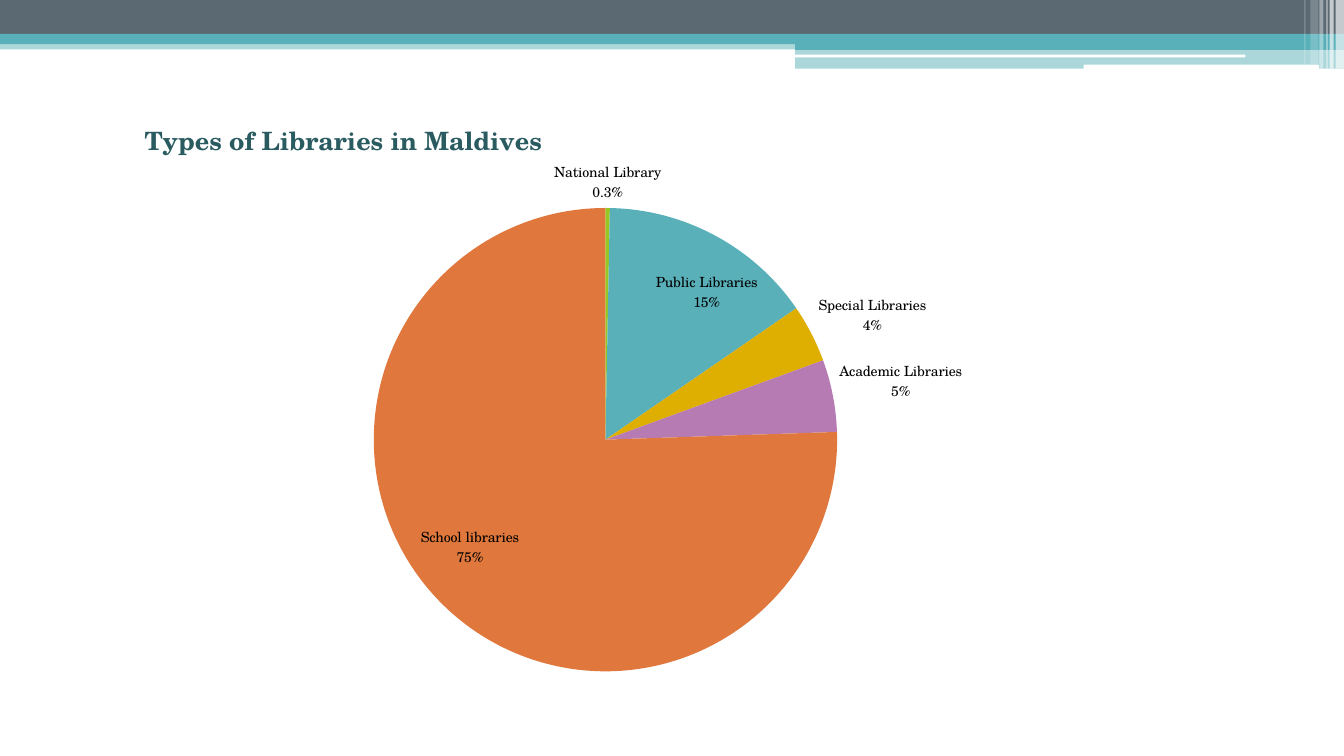
from lxml import etree
from pptx import Presentation
from pptx.chart.data import CategoryChartData
from pptx.dml.color import RGBColor
from pptx.enum.chart import XL_CHART_TYPE, XL_LABEL_POSITION
from pptx.enum.shapes import MSO_SHAPE
from pptx.oxml.ns import qn
from pptx.util import Pt

RECT, ROUND = MSO_SHAPE.RECTANGLE, MSO_SHAPE.ROUNDED_RECTANGLE
PIE = XL_CHART_TYPE.PIE
INSIDE, OUTSIDE = XL_LABEL_POSITION.INSIDE_END, XL_LABEL_POSITION.OUTSIDE_END
WIDE, HIGH = 960, 540
FONT = "TeX Gyre Schola"
COLORS = {
    "slate": "5B6973", "teal": "59B0B9", "white": "FFFFFF", "black": "000000",
    "title": "295B60", "green": "98C723", "gold": "DEAE00",
    "mauve": "B77BB4", "orange": "E0773C",
}

# Band parts: shape, left, top, width, height, color, opacity
BARS = [
    (RECT, 0, 28.8, 960, 6.5, "teal", 50),
    (RECT, 0, 0, 960, 24.3, "slate", 100),
    (RECT, 0, 24.3, 960, 7.2, "teal", 100),
    (RECT, 568, 28, 392, 7.7, "teal", 100),
    (RECT, 568, 35.7, 392, 13.3, "teal", 50),
    (ROUND, 567.5, 39, 322, 2, "white", 100),
    (ROUND, 774, 46.2, 168, 3.2, "white", 100),
]
# Stripes at the right end: left, width, height, opacity
STRIPES = [
    (954, 6, 49, 65), (949.7, 2.9, 49, 65), (947.5, 0.8, 49, 60),
    (942.5, 2.9, 49, 40), (936, 5.8, 46, 20), (931.7, 0.8, 46, 30),
]
# Slices: name, percent, color, label place, label shift in points
SLICES = [
    ("National Library", 0.3, "green", OUTSIDE, None),
    ("Public Libraries", 15, "teal", INSIDE, (32.2, 22.2)),
    ("Special Libraries", 4, "gold", OUTSIDE, (1.5, 2.9)),
    ("Academic Libraries", 5, "mauve", OUTSIDE, (0.5, 4.3)),
    ("School libraries", 75, "orange", INSIDE, (-19.8, -25)),
]
PERCENT = '[<1]0.0"%";0"%"'
TITLE = {"size": Pt(18), "bold": True, "name": FONT}
LABEL = {"size": Pt(10), "bold": False, "name": FONT}


def tint(name):
    return RGBColor.from_string(COLORS[name])


def style(font, form, color):
    for key, value in form.items():
        setattr(font, key, value)
    font.color.rgb = tint(color)


def add_bar(slide, kind, left, top, wide, high, color, alpha):
    bar = slide.shapes.add_shape(kind, Pt(left), Pt(top), Pt(wide), Pt(high))
    bar.shadow.inherit = False
    bar.line.fill.background()
    bar.fill.solid()
    bar.fill.fore_color.rgb = tint(color)
    if alpha < 100:
        tone = bar._element.spPr.find(".//" + qn("a:srgbClr"))
        etree.SubElement(tone, qn("a:alpha"), val=str(alpha * 1000))


def add_band(slide, left, top):
    for kind, x, y, wide, high, color, alpha in BARS:
        add_bar(slide, kind, left + x, top + y, wide, high, color, alpha)
    for x, wide, high, alpha in STRIPES:
        add_bar(slide, RECT, left + x, top, wide, high, "white", alpha)


def set_place(layout, size, modes=True, **parts):
    """Place a chart part, in points, within a chart of this size."""
    manual = etree.SubElement(layout, qn("c:manualLayout"))
    if "w" in parts:
        etree.SubElement(manual, qn("c:layoutTarget"), val="inner")
    if modes:
        for key in ("x", "y"):
            etree.SubElement(manual, qn(f"c:{key}Mode"), val="edge")
    for key, value in parts.items():
        share = value / size[key in "yh"]
        etree.SubElement(manual, qn(f"c:{key}"), val=str(share))


def add_labels(series, size):
    labels = series.data_labels
    labels.show_value = labels.show_category_name = True
    labels.show_percentage = False
    labels.number_format = PERCENT
    labels.number_format_is_linked = False
    labels.position = INSIDE
    style(labels.font, LABEL, "black")
    for index, (_, _, color, place, _) in enumerate(SLICES):
        point = series.points[index]
        point.format.fill.solid()
        point.format.fill.fore_color.rgb = tint(color)
        point.format.line.fill.background()
        label = point.data_label
        style(label.font, LABEL, "black")
        label.position = place
    # Name and value on two lines, some moved
    root = labels._element
    items = root.findall(qn("c:dLbl"))
    for item, (*_, shift) in zip(items, SLICES):
        form = etree.Element(qn("c:numFmt"), formatCode=PERCENT, sourceLinked="0")
        item.find(qn("c:txPr")).addprevious(form)
        item.find(qn("c:showCatName")).set("val", "1")
        if shift:
            layout = etree.Element(qn("c:layout"))
            item.find(qn("c:idx")).addnext(layout)
            set_place(layout, size, modes=False, x=shift[0], y=shift[1])
    for item in [root, *items]:
        split = etree.Element(qn("c:separator"))
        split.text = "\n"
        item.find(qn("c:showBubbleSize")).addnext(split)
    for lead in root.findall(qn("c:showLeaderLines")):
        lead.set("val", "0")


def add_pie(slide, left, top, wide, high):
    size = (wide, high)
    data = CategoryChartData()
    data.categories = [name for name, *_ in SLICES]
    data.add_series("Series 1", [value for _, value, *_ in SLICES])
    frame = slide.shapes.add_chart(PIE, Pt(left), Pt(top), Pt(wide), Pt(high), data)
    chart = frame.chart
    chart.has_legend = False
    style(chart.font, LABEL, "black")
    # Title
    chart.has_title = True
    title = chart.chart_title
    run = title.text_frame.paragraphs[0].add_run()
    run.text = "Types of Libraries in Maldives"
    style(run.font, TITLE, "title")
    set_place(title._element.find(qn("c:layout")), size, x=0, y=23)
    # Plot
    area = chart._chartSpace.find(".//" + qn("c:plotArea"))
    for old in area.findall(qn("c:layout")):
        area.remove(old)
    layout = etree.Element(qn("c:layout"))
    area.insert(0, layout)
    set_place(layout, size, x=167, y=90.3, w=331, h=331)
    plot = chart.plots[0]
    plot.vary_by_categories = True
    add_labels(plot.series[0], size)


def main():
    deck = Presentation()
    deck.slide_width, deck.slide_height = Pt(WIDE), Pt(HIGH)
    slide = deck.slides.add_slide(deck.slide_layouts[6])
    add_band(slide, 0, 0)
    add_pie(slide, 100, 58.3, 755.3, 431.3)
    deck.save("out.pptx")


if __name__ == "__main__":
    main()
